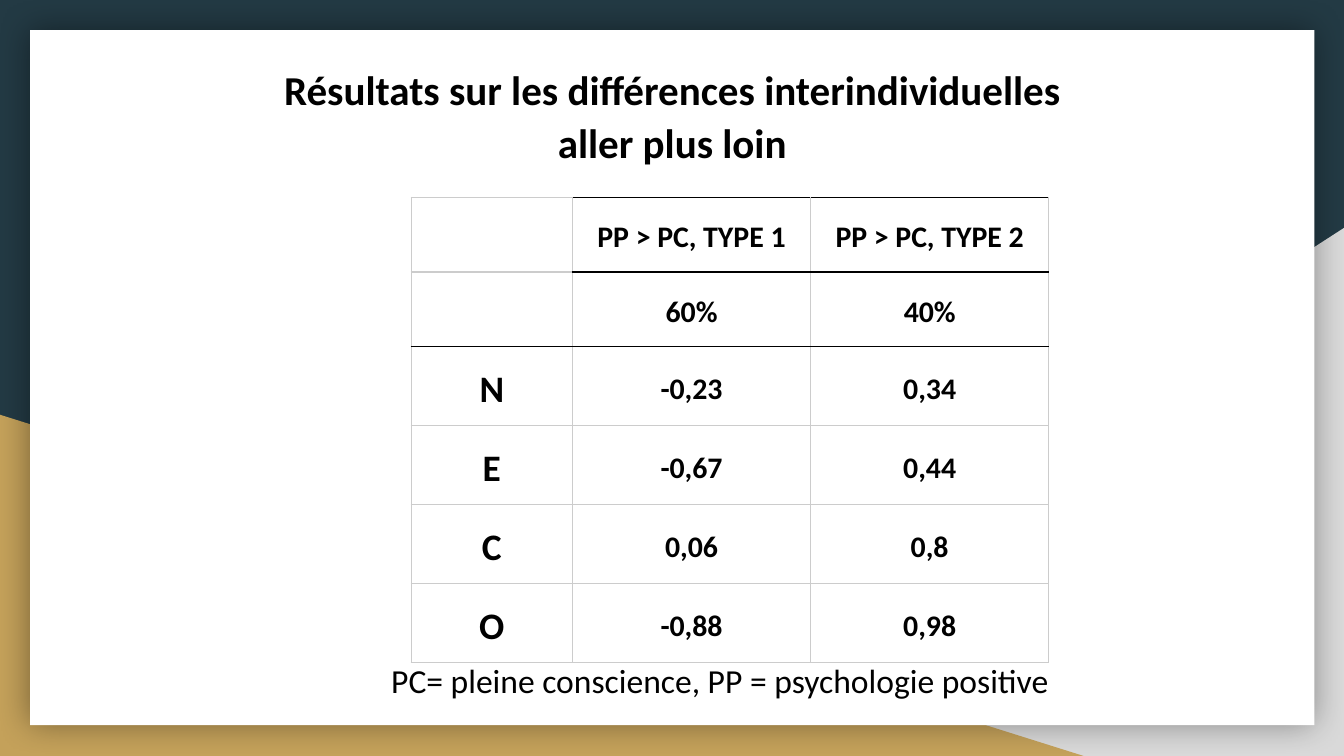
from dataclasses import dataclass

import lxml.etree
import pptx
import pptx.dml.color
import pptx.enum.shapes
import pptx.enum.text
import pptx.oxml.ns
import pptx.util
from pptx.util import Cm

FONT = "Calibri"
COLOURS = {
    "night": "233A44",
    "grey": "D9D9D9",
    "gold": "C4A15A",
    "paper": "FFFFFF",
    "ink": "000000",
    "rule": "CCCCCC",
}
RESULTS = [
    ("", "PP > PC, TYPE 1", "PP > PC, TYPE 2"),
    ("", "60%", "40%"),
    ("N", "-0,23", "0,34"),
    ("E", "-0,67", "0,44"),
    ("C", "0,06", "0,8"),
    ("O", "-0,88", "0,98"),
]
HEADER_ROWS = 2
COLUMN_WIDTHS = (3.05, 4.5, 4.5)
HEADER_HEIGHT, TRAIT_HEIGHT = 1.41, 1.32
INSET = Cm(0.25)


@dataclass
class Panel:
    """A background shape, with its place in centimetres."""
    kind: pptx.enum.shapes.MSO_SHAPE
    left: float
    top: float
    width: float
    height: float
    colour: str
    flipped: bool = False
    shadowed: bool = False


TRIANGLE = pptx.enum.shapes.MSO_SHAPE.RIGHT_TRIANGLE
PANELS = [
    Panel(TRIANGLE, 9.96, 4.31, 15.44, 9.98, "grey", flipped=True),
    Panel(TRIANGLE, 0, 7.84, 20.48, 6.45, "gold"),
    Panel(pptx.enum.shapes.MSO_SHAPE.RECTANGLE, 0.57, 0.57, 24.27, 13.14,
          "paper", shadowed=True),
]


def rgb(name: str) -> pptx.dml.color.RGBColor:
    return pptx.dml.color.RGBColor.from_string(COLOURS[name])


def add_child(parent, tag: str, **attributes: str):
    return lxml.etree.SubElement(parent, pptx.oxml.ns.qn(tag), attributes)


def draw_panel(slide, panel: Panel) -> None:
    shape = slide.shapes.add_shape(
        panel.kind, Cm(panel.left), Cm(panel.top), Cm(panel.width), Cm(panel.height))
    shape.fill.solid()
    shape.fill.fore_color.rgb = rgb(panel.colour)
    shape.line.fill.background()
    shape.shadow.inherit = False
    properties = shape._element.spPr
    if panel.flipped:
        properties.xfrm.set("flipH", "1")
    if panel.shadowed:
        effects = properties.find(pptx.oxml.ns.qn("a:effectLst"))
        shadow = add_child(effects, "a:outerShdw", blurRad=str(pptx.util.Pt(18)),
                           dist="0", dir="0", algn="ctr", rotWithShape="0")
        tint = add_child(shadow, "a:srgbClr", val=COLOURS["ink"])
        add_child(tint, "a:alpha", val="40000")


def write_centred(frame, text: str, size: float, bold: bool,
                  line_spacing: float, space_after: float) -> None:
    frame.text = text
    for paragraph in frame.paragraphs:
        paragraph.alignment = pptx.enum.text.PP_ALIGN.CENTER
        paragraph.line_spacing = line_spacing
        paragraph.space_before = pptx.util.Pt(0)
        paragraph.space_after = pptx.util.Pt(space_after)
        for run in paragraph.runs:
            run.font.name = FONT
            run.font.size = pptx.util.Pt(size)
            run.font.bold = bold
            run.font.color.rgb = rgb("ink")


def set_up_frame(frame, anchor: pptx.enum.text.MSO_ANCHOR) -> None:
    frame.word_wrap = True
    frame.auto_size = pptx.enum.text.MSO_AUTO_SIZE.NONE
    frame.vertical_anchor = anchor
    frame.margin_left = frame.margin_right = INSET
    frame.margin_top = frame.margin_bottom = INSET


def border_colour(line: int, column: int) -> str:
    """Black above and below the type headings, and under the whole header."""
    black = line == HEADER_ROWS or (line < HEADER_ROWS and column > 0)
    return "ink" if black else "rule"


def draw_borders(cell, row: int, column: int) -> None:
    sides = {
        "a:lnL": "rule",
        "a:lnR": "rule",
        "a:lnT": border_colour(row, column),
        "a:lnB": border_colour(row + 1, column),
    }
    properties = cell._tc.get_or_add_tcPr()
    for position, (tag, colour) in enumerate(sides.items()):
        border = add_child(properties, tag, w=str(pptx.util.Pt(0.75)))
        add_child(add_child(border, "a:solidFill"), "a:srgbClr", val=COLOURS[colour])
        properties.insert(position, border)


def draw_results(slide) -> None:
    heights = [HEADER_HEIGHT if row < HEADER_ROWS else TRAIT_HEIGHT
               for row in range(len(RESULTS))]
    table = slide.shapes.add_table(
        len(RESULTS), len(COLUMN_WIDTHS), Cm(7.77), Cm(3.73),
        Cm(sum(COLUMN_WIDTHS)), Cm(sum(heights))).table
    table.first_row = table.horz_banding = False
    for column, width in zip(table.columns, COLUMN_WIDTHS):
        column.width = Cm(width)
    for row, height in zip(table.rows, heights):
        row.height = Cm(height)
    for row, values in enumerate(RESULTS):
        for column, value in enumerate(values):
            cell = table.cell(row, column)
            cell.fill.background()
            draw_borders(cell, row, column)
            if value:
                cell.vertical_anchor = pptx.enum.text.MSO_ANCHOR.MIDDLE
                cell.margin_left = cell.margin_right = Cm(0.08)
                cell.margin_top = cell.margin_bottom = INSET
                write_centred(cell.text_frame, value, 16 if column else 20,
                              True, 1.15, 0)


def main() -> None:
    presentation = pptx.Presentation()
    presentation.slide_width, presentation.slide_height = Cm(25.4), Cm(14.29)
    slide = presentation.slides.add_slide(presentation.slide_layouts[5])
    slide.background.fill.solid()
    slide.background.fill.fore_color.rgb = rgb("night")

    for panel in PANELS:
        draw_panel(slide, panel)

    title = slide.shapes.title
    slide.shapes._spTree.append(title._element)
    title.left, title.top, title.width, title.height = Cm(0.79), Cm(0.89), Cm(23.83), Cm(1.63)
    set_up_frame(title.text_frame, pptx.enum.text.MSO_ANCHOR.TOP)
    write_centred(title.text_frame,
                  "Résultats sur les différences interindividuelles\valler plus loin",
                  22, True, 1.08, 8)

    draw_results(slide)

    legend = slide.shapes.add_textbox(Cm(2.08), Cm(11.51), Cm(23.06), Cm(2.64))
    set_up_frame(legend.text_frame, pptx.enum.text.MSO_ANCHOR.MIDDLE)
    write_centred(legend.text_frame, "PC= pleine conscience, PP = psychologie positive",
                  18, False, 1.08, 8)

    presentation.save("out.pptx")


if __name__ == "__main__":
    main()
